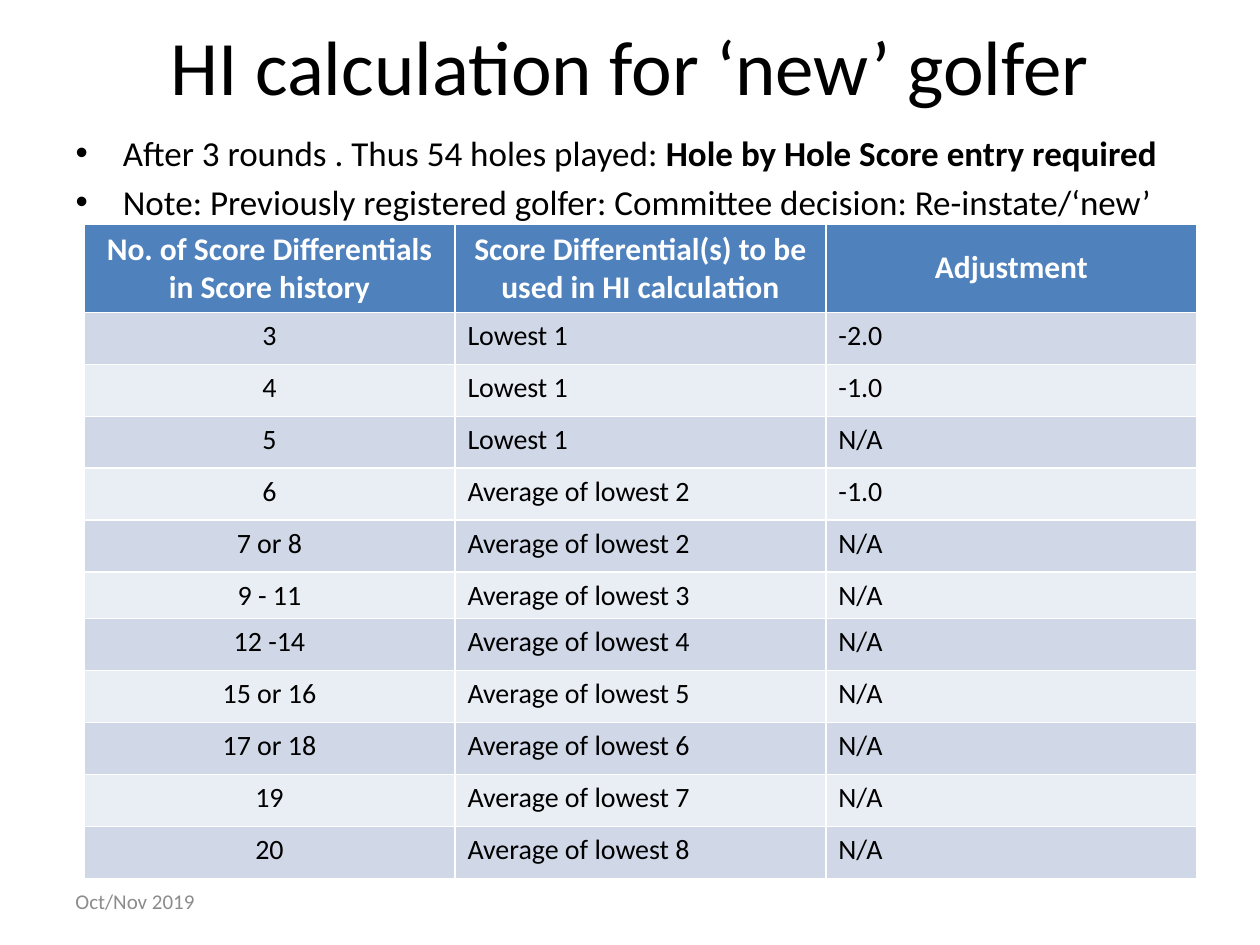
"""Build the slide on handicap index calculation for new golfers."""
from pptx import Presentation
from pptx.dml.color import RGBColor
from pptx.enum.text import MSO_ANCHOR as Anchor, PP_ALIGN as Align
from pptx.util import Emu, Pt

EMU_PER_PX = 914400 / 126
FONT = "Calibri"
BLACK = RGBColor(0x00, 0x00, 0x00)
WHITE = RGBColor(0xFF, 0xFF, 0xFF)
GREY = RGBColor(0x8C, 0x8C, 0x8C)
HEADER_BLUE = RGBColor(0x4F, 0x81, 0xBD)
BANDS = [RGBColor(0xD0, 0xD8, 0xE8), RGBColor(0xE9, 0xED, 0xF4)]

BULLETS = [
    [("After 3 rounds . Thus 54 holes played: ", False),
     ("Hole by Hole Score entry required", True)],
    [("Note: Previously registered golfer: Committee decision: Re-instate/‘new’", False)],
]
ROWS = [
    ("No. of Score Differentials in Score history",
     "Score Differential(s) to be used in HI calculation", "Adjustment"),
    ("3", "Lowest 1", "-2.0"),
    ("4", "Lowest 1", "-1.0"),
    ("5", "Lowest 1", "N/A"),
    ("6", "Average of lowest 2", "-1.0"),
    ("7 or 8", "Average of lowest 2", "N/A"),
    ("9 - 11", "Average of lowest 3", "N/A"),
    ("12 -14", "Average of lowest 4", "N/A"),
    ("15 or 16", "Average of lowest 5", "N/A"),
    ("17 or 18", "Average of lowest 6", "N/A"),
    ("19", "Average of lowest 7", "N/A"),
    ("20", "Average of lowest 8", "N/A"),
]
ROW_HEIGHTS = [79] + [52] * 5 + [23] + [52] * 5


def px(*lengths):
    return [Emu(round(length * EMU_PER_PX)) for length in lengths]


def set_font(paragraph, size, color):
    paragraph.font.name = FONT
    paragraph.font.size = Pt(size)
    paragraph.font.color.rgb = color


deck = Presentation()
deck.slide_width, deck.slide_height = px(1260, 945)
page = deck.slides.add_slide(deck.slide_layouts[1])

title = page.shapes.title
title.left, title.top, title.width, title.height = px(63, -14, 1134, 158)
title.text_frame.text = "HI calculation for ‘new’ golfer"
set_font(title.text_frame.paragraphs[0], 44, BLACK)

body = page.placeholders[1]
body.left, body.top, body.width, body.height = px(63, 125, 1134, 679)
for index, spans in enumerate(BULLETS):
    frame = body.text_frame
    para = frame.add_paragraph() if index else frame.paragraphs[0]
    set_font(para, 20, BLACK)
    for text, bold in spans:
        span = para.add_run()
        span.text = text
        span.font.bold = bold

date_box = page.shapes.add_textbox(*px(63, 876, 294, 50))
date_box.text_frame.word_wrap = True
date_box.text_frame.vertical_anchor = Anchor.MIDDLE
date_box.text_frame.text = "Oct/Nov 2019"
set_font(date_box.text_frame.paragraphs[0], 12, GREY)

table = page.shapes.add_table(
    len(ROWS), len(ROWS[0]), *px(84, 224, 1113, sum(ROW_HEIGHTS))).table
for column in table.columns:
    column.width = px(371)[0]
for row_index, (values, height) in enumerate(zip(ROWS, ROW_HEIGHTS)):
    is_header = row_index == 0
    table.rows[row_index].height = px(height)[0]
    for column_index, value in enumerate(values):
        cell = table.cell(row_index, column_index)
        cell.text = value
        cell.fill.solid()
        cell.fill.fore_color.rgb = HEADER_BLUE if is_header else BANDS[(row_index - 1) % 2]
        para = cell.text_frame.paragraphs[0]
        para.alignment = Align.CENTER if is_header or column_index == 0 else Align.LEFT
        set_font(para, 18 if is_header else 16, WHITE if is_header else BLACK)
        para.font.bold = is_header
table.cell(0, 2).vertical_anchor = Anchor.MIDDLE

deck.save("out.pptx")
